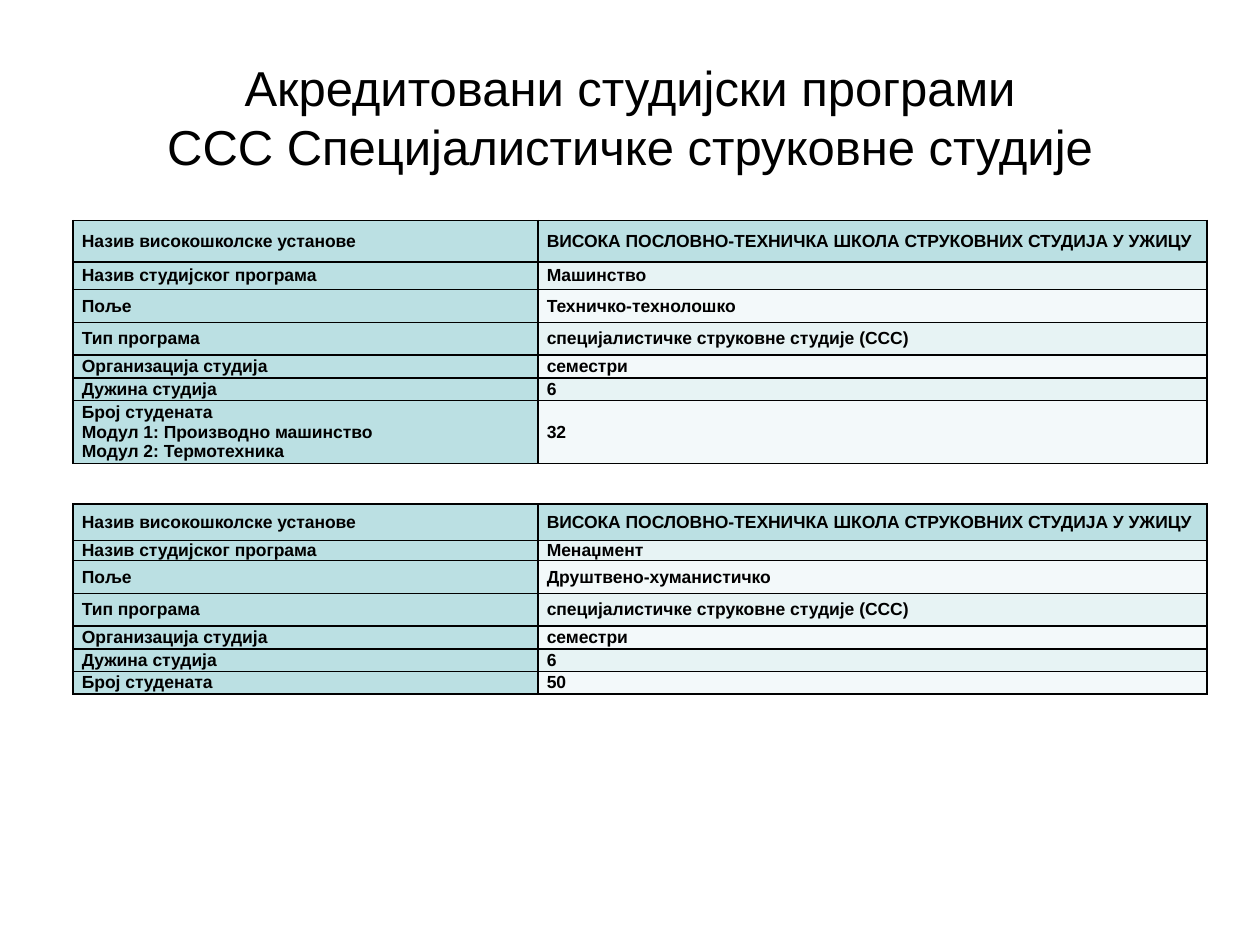
from lxml import etree
from pptx import Presentation
from pptx.dml.color import RGBColor
from pptx.enum.text import MSO_ANCHOR, MSO_AUTO_SIZE, PP_ALIGN
from pptx.oxml.ns import qn
from pptx.util import Inches, Pt

MIDDLE = MSO_ANCHOR.MIDDLE
CENTER = PP_ALIGN.CENTER
NO_FIT = MSO_AUTO_SIZE.NONE
FONT = "Arial"
BLACK, HEADER, BAND_DARK, BAND_LIGHT = "000000", "BBE0E3", "E7F3F4", "F3F9FA"


def add_span(para, text, size, bold=False):
    span = para.add_run()
    span.text = text
    span.font.name = FONT
    span.font.size = Pt(size)
    span.font.bold = bold
    span.font.color.rgb = RGBColor.from_string(BLACK)


def add_borders(cell):
    # Borders come before the fill in the cell properties
    properties = cell._tc.get_or_add_tcPr()
    for index, side in enumerate(("lnL", "lnR", "lnT", "lnB")):
        line = etree.Element(qn(f"a:{side}"), w=str(Pt(1)))
        fill = etree.SubElement(line, qn("a:solidFill"))
        etree.SubElement(fill, qn("a:srgbClr"), val=BLACK)
        properties.insert(index, line)


deck = Presentation()
deck.slide_width, deck.slide_height = Inches(10), Inches(7.5)
page = deck.slides.add_slide(deck.slide_layouts[5])

# Title
title = page.shapes.title
title.left, title.top = Inches(0.5), Inches(0.3)
title.width, title.height = Inches(9), Inches(1.25)
frame = title.text_frame
frame.word_wrap = True
frame.auto_size = NO_FIT
frame.vertical_anchor = MIDDLE
para = frame.paragraphs[0]
para.alignment = CENTER
add_span(para, "Акредитовани студијски програми", 28)
para.add_line_break()
add_span(para, "ССС Специјалистичке струковне студије", 28)

# Programme tables: the labels are shared, the values differ
LABELS = ["Назив високошколске установе", "Назив студијског програма", "Поље",
          "Тип програма", "Организација студија", "Дужина студија", "Број студената"]
SCHOOL = "ВИСОКА ПОСЛОВНО-ТЕХНИЧКА ШКОЛА СТРУКОВНИХ СТУДИЈА У УЖИЦУ"
STUDY_TYPE = "специјалистичке струковне студије (ССС)"
COLUMNS = [3.69, 5.31]
PROGRAMMES = [
    (1.75, [0.33, 0.22, 0.26, 0.26, 0.18, 0.18, 0.5],
     ["Машинство", "Техничко-технолошко"], "32",
     ["Модул 1: Производно машинство", "Модул 2: Термотехника"]),
    (4, [0.29, 0.16, 0.26, 0.26, 0.18, 0.18, 0.18],
     ["Mенаџмент", "Друштвено-хуманистичко"], "50", []),
]

for top, heights, name_and_field, students, modules in PROGRAMMES:
    values = [SCHOOL, *name_and_field, STUDY_TYPE, "семестри", "6", students]
    table = page.shapes.add_table(
        len(LABELS), len(COLUMNS), Inches(0.58), Inches(top),
        Inches(sum(COLUMNS)), Inches(sum(heights))).table
    for column, width in zip(table.columns, COLUMNS):
        column.width = Inches(width)
    for row, height in enumerate(heights):
        table.rows[row].height = Inches(height)
        is_last = row == len(heights) - 1
        label_lines = [LABELS[row]] + (modules if is_last else [])
        for column, lines in enumerate((label_lines, [values[row]])):
            cell = table.cell(row, column)
            cell.vertical_anchor = MIDDLE
            cell.margin_left = cell.margin_right = Inches(0.07)
            cell.margin_top = cell.margin_bottom = 0
            band = BAND_DARK if row % 2 else BAND_LIGHT
            cell.fill.solid()
            cell.fill.fore_color.rgb = RGBColor.from_string(
                HEADER if row == 0 or column == 0 else band)
            add_borders(cell)
            for index, text in enumerate(lines):
                frame = cell.text_frame
                para = frame.add_paragraph() if index else frame.paragraphs[0]
                add_span(para, text, 10, bold=True)

deck.save("out.pptx")
